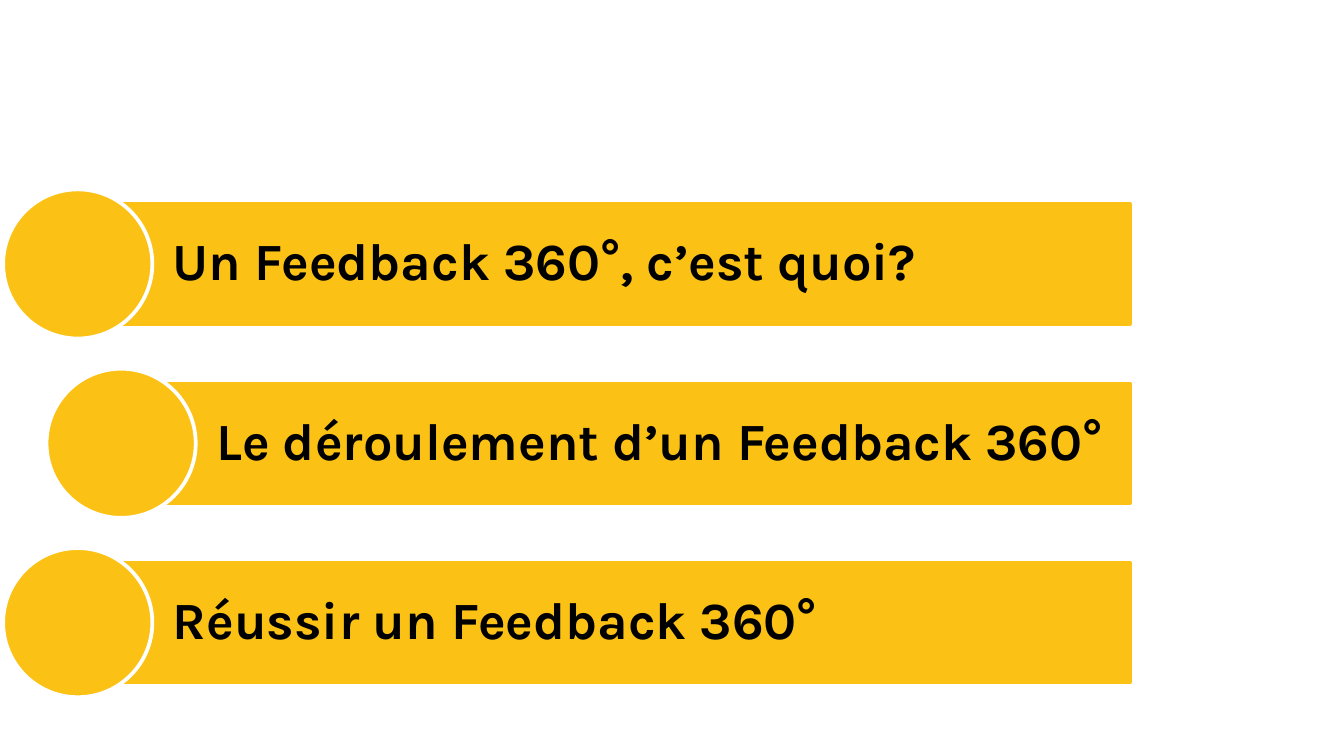
from pptx import Presentation
from pptx.dml.color import RGBColor
from pptx.enum.shapes import MSO_SHAPE as Shape
from pptx.enum.text import MSO_ANCHOR as Anchor, PP_ALIGN as Align
from pptx.util import Cm, Pt

COLOURS = {"yellow": "FBC215", "white": "FFFFFF", "black": "000000"}
TOPICS = [
    ("Un Feedback 360°, c’est quoi?", 1.47),
    ("Le déroulement d’un Feedback 360°", 2.29),
    ("Réussir un Feedback 360°", 1.47),
]
FIRST_TOP, PITCH = 3.86, 3.39
BAR_RIGHT, BAR_HEIGHT = 21.36, 2.26
DISC_SIZE = 2.82


def colour(name):
    """Return the named colour."""
    return RGBColor.from_string(COLOURS[name])


def add_figure(page, kind, left, top, width, height, line):
    """Add a yellow shape with an outline, measured in centimetres."""
    figure = page.shapes.add_shape(kind, Cm(left), Cm(top), Cm(width), Cm(height))
    figure.shadow.inherit = False
    figure.fill.solid()
    figure.fill.fore_color.rgb = colour("yellow")
    figure.line.color.rgb = colour(line)
    figure.line.width = Pt(2)
    return figure


def write_topic(bar, text):
    """Write the topic inside its bar, clear of the disc."""
    frame = bar.text_frame
    frame.word_wrap = True
    frame.vertical_anchor = Anchor.MIDDLE
    frame.margin_left = Cm(1.8)
    frame.margin_top = frame.margin_right = frame.margin_bottom = Cm(0.2)
    para = frame.paragraphs[0]
    para.text = text
    para.alignment = Align.LEFT
    para.line_spacing = 0.9
    para.font.name = "Karla"
    para.font.size = Pt(28)
    para.font.bold = True
    para.font.color.rgb = colour("black")


def add_topic(page, text, left, top):
    """Add a topic bar with a disc centred on its left edge."""
    bar = add_figure(page, Shape.RECTANGLE, left, top, BAR_RIGHT - left, BAR_HEIGHT, "yellow")
    write_topic(bar, text)
    disc_left = left - DISC_SIZE / 2
    disc_top = top + (BAR_HEIGHT - DISC_SIZE) / 2
    add_figure(page, Shape.OVAL, disc_left, disc_top, DISC_SIZE, DISC_SIZE, "white")


def main():
    """Build the agenda slide."""
    deck = Presentation()
    deck.slide_width, deck.slide_height = Cm(25.4), Cm(14.29)
    page = deck.slides.add_slide(deck.slide_layouts[6])
    for index, (text, left) in enumerate(TOPICS):
        add_topic(page, text, left, FIRST_TOP + index * PITCH)
    deck.save("out.pptx")


if __name__ == "__main__":
    main()
